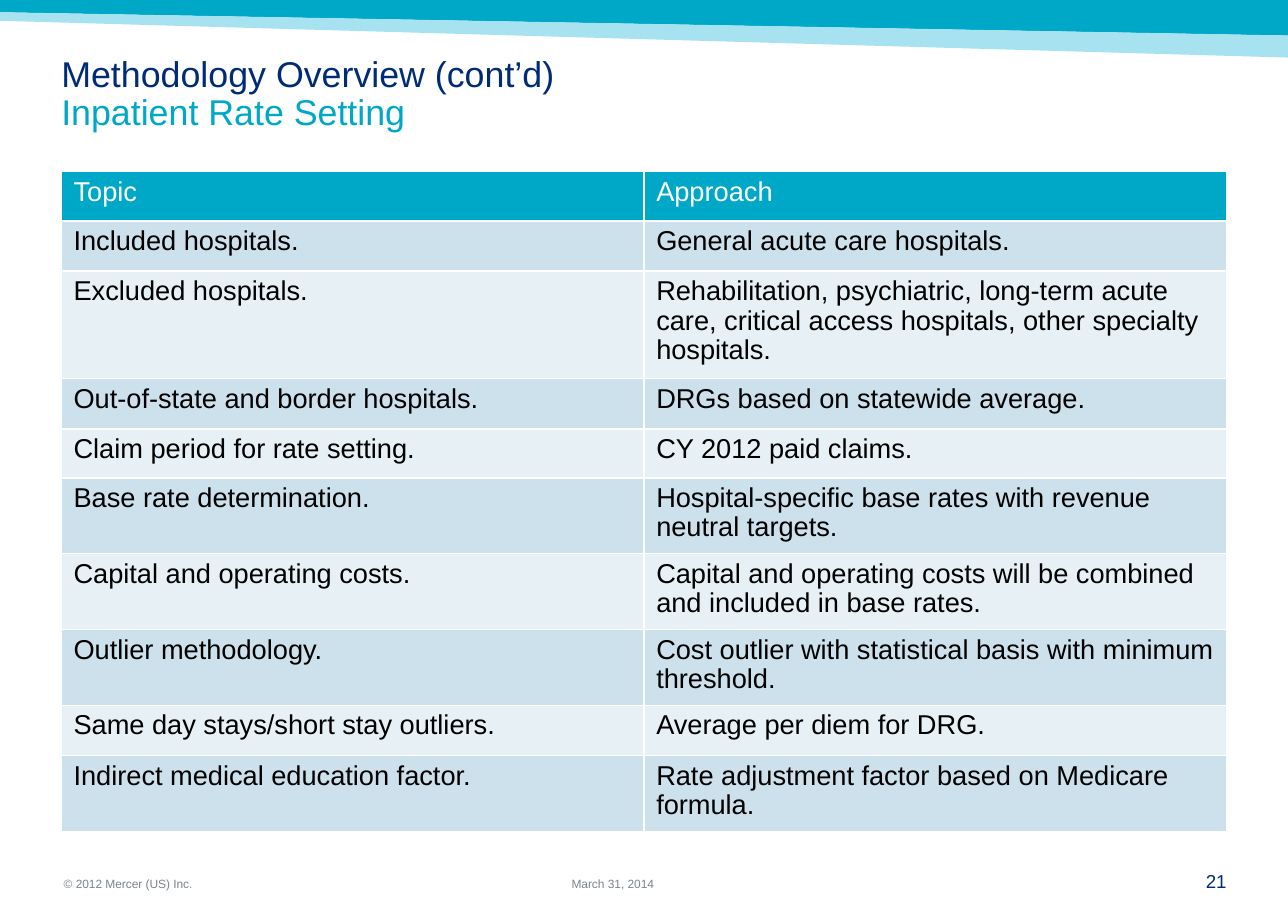
from lxml.etree import SubElement
from pptx import Presentation
from pptx.dml.color import RGBColor
from pptx.enum.text import MSO_ANCHOR, PP_ALIGN
from pptx.oxml.ns import qn
from pptx.util import Inches, Pt

NAVY, TEAL, PALE_TEAL = "002C77", "00A8C8", "A6E2EF"
BLACK, WHITE, GRAY = "000000", "FFFFFF", "7C848A"
BAND_COLORS = ("CCE1EB", "E7F1F5")

BANNER_BANDS = [
    (TEAL, [(0, 0), (10.5, 0), (10.5, 0.29), (0, 0.1)]),
    (PALE_TEAL, [(0, 0.1), (10.5, 0.29), (10.5, 0.47), (0, 0.17)]),
]

# Each row: topic, approach, row height
TOPIC_ROWS = [
    ("Topic", "Approach", 0.4),
    ("Included hospitals.", "General acute care hospitals.", 0.41),
    ("Excluded hospitals.",
     "Rehabilitation, psychiatric, long-term acute care, critical access "
     "hospitals, other specialty hospitals.", 0.84),
    ("Out-of-state and border hospitals.", "DRGs based on statewide average.", 0.41),
    ("Claim period for rate setting.", "CY 2012 paid claims.", 0.4),
    ("Base rate determination.",
     "Hospital-specific base rates with revenue neutral targets.", 0.59),
    ("Capital and operating costs.",
     "Capital and operating costs will be combined and included in base rates.", 0.59),
    ("Outlier methodology.",
     "Cost outlier with statistical basis with minimum threshold.", 0.59),
    ("Same day stays/short stay outliers.", "Average per diem for DRG.", 0.41),
    ("Indirect medical education factor.",
     "Rate adjustment factor based on Medicare formula.", 0.59),
]


def color(hex_string):
    return RGBColor.from_string(hex_string)


class SlideBuilder:
    font_name = "Arial"

    def __init__(self, slide):
        self.slide = slide

    def add_run(self, paragraph, text, size, text_color):
        run = paragraph.add_run()
        run.text = text
        run.font.name = self.font_name
        run.font.size = Pt(size)
        run.font.color.rgb = color(text_color)

    def add_polygon(self, points, fill):
        corners = [(Inches(x), Inches(y)) for x, y in points]
        builder = self.slide.shapes.build_freeform(*corners[0])
        builder.add_line_segments(corners[1:], close=True)
        shape = builder.convert_to_shape()
        shape.shadow.inherit = False
        shape.fill.solid()
        shape.fill.fore_color.rgb = color(fill)
        shape.line.fill.background()

    def add_text(self, bounds, lines, size, align=PP_ALIGN.LEFT,
                 anchor=MSO_ANCHOR.TOP, vertical_inset=0, line_spacing=None):
        """Add a text box with one paragraph per (text, color) line."""
        shape = self.slide.shapes.add_textbox(*map(Inches, bounds))
        frame = shape.text_frame
        frame.word_wrap = True
        frame.vertical_anchor = anchor
        frame.margin_left = frame.margin_right = 0
        frame.margin_top = frame.margin_bottom = Inches(vertical_inset)
        for index, (text, text_color) in enumerate(lines):
            paragraph = frame.add_paragraph() if index else frame.paragraphs[0]
            paragraph.alignment = align
            paragraph.line_spacing = line_spacing
            self.add_run(paragraph, text, size, text_color)

    def set_cell_borders(self, cell, border_color, width):
        properties = cell._tc.get_or_add_tcPr()
        for index, side in enumerate(("lnL", "lnR", "lnT", "lnB")):
            line = properties.makeelement(qn(f"a:{side}"), {"w": str(Pt(width))})
            fill = SubElement(line, qn("a:solidFill"))
            SubElement(fill, qn("a:srgbClr"), val=border_color)
            properties.insert(index, line)

    def add_table(self, bounds, rows, size):
        shape = self.slide.shapes.add_table(len(rows), 2, *map(Inches, bounds))
        table = shape.table
        for row_index, (*texts, height) in enumerate(rows):
            table.rows[row_index].height = Inches(height)
            is_header = row_index == 0
            fill = TEAL if is_header else BAND_COLORS[(row_index - 1) % 2]
            for column_index, text in enumerate(texts):
                cell = table.cell(row_index, column_index)
                cell.fill.solid()
                cell.fill.fore_color.rgb = color(fill)
                self.set_cell_borders(cell, WHITE, 1)
                paragraph = cell.text_frame.paragraphs[0]
                paragraph.alignment = PP_ALIGN.LEFT
                paragraph.line_spacing = 0.97
                self.add_run(paragraph, text, size, WHITE if is_header else BLACK)


def main():
    presentation = Presentation()
    presentation.slide_width = Inches(10.5)
    presentation.slide_height = Inches(7.5)
    slide = presentation.slides.add_slide(presentation.slide_layouts[6])
    builder = SlideBuilder(slide)

    for fill, points in BANNER_BANDS:
        builder.add_polygon(points, fill)
    builder.add_text((0.5, 0.42, 9.5, 0.76),
                     [("Methodology Overview (cont’d)", NAVY),
                      ("Inpatient Rate Setting", TEAL)],
                     21, vertical_inset=0.05, line_spacing=0.88)
    builder.add_table((0.5, 1.4, 9.5, 5.23), TOPIC_ROWS, 16)
    builder.add_text((0.52, 7.15, 3.17, 0.11), [("© 2012 Mercer (US) Inc.", GRAY)],
                     7, anchor=MSO_ANCHOR.BOTTOM)
    builder.add_text((4.66, 7.14, 1.18, 0.12), [("March 31, 2014", GRAY)],
                     7, anchor=MSO_ANCHOR.BOTTOM)
    builder.add_text((9.51, 7.09, 0.49, 0.18), [("21", NAVY)], 11, align=PP_ALIGN.RIGHT)

    presentation.save("out.pptx")


if __name__ == "__main__":
    main()
